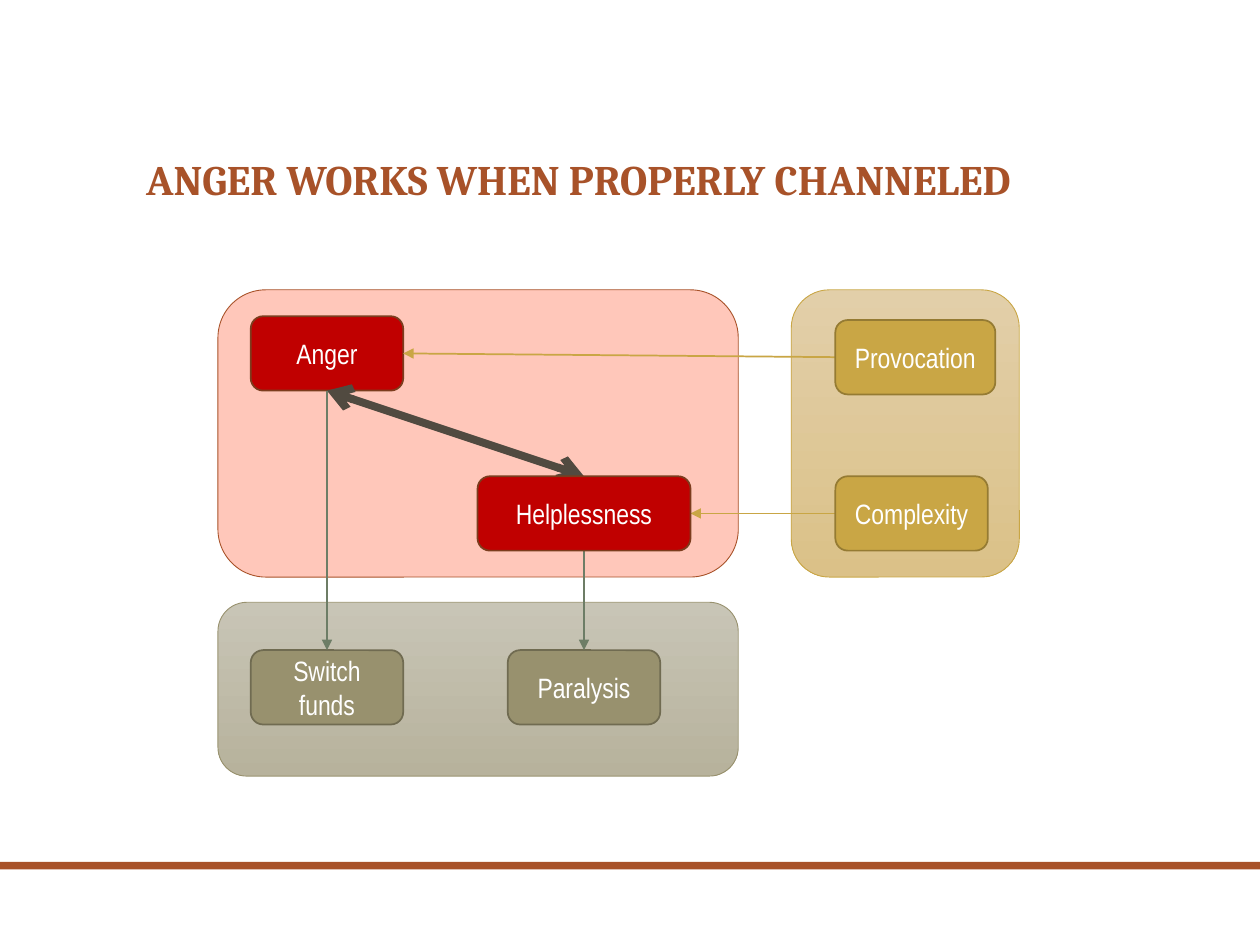
from lxml.etree import SubElement
from pptx import Presentation
from pptx.dml.color import RGBColor
from pptx.enum.shapes import MSO_CONNECTOR as Connector, MSO_SHAPE as Shape
from pptx.enum.text import MSO_ANCHOR as Anchor, MSO_AUTO_SIZE as AutoSize, PP_ALIGN as Align
from pptx.oxml.ns import qn
from pptx.util import Inches, Pt

RUST, GOLD, OLIVE, SAGE = "A85229", "C9A645", "98916E", "6D7D66"
RED, WHITE, CHARCOAL = "C00000", "FFFFFF", "514A40"
TOP, LEFT, BOTTOM, RIGHT = range(4)
NODE_WIDTH, NODE_HEIGHT = 1.21, 0.59


def color(value):
    return RGBColor.from_string(value)


def apply_format(target, values):
    for name, value in values.items():
        setattr(target, name, value)


def set_font(para, face, size, tint, bold=False):
    apply_format(para.font, {"name": face, "size": Pt(size), "bold": bold})
    para.font.color.rgb = color(tint)


def add_block(page, kind, area, outline=None, weight=1):
    block = page.shapes.add_shape(kind, *map(Inches, area))
    block.shadow.inherit = False
    if outline:
        block.line.color.rgb = color(outline)
        block.line.width = Pt(weight)
    else:
        block.line.fill.background()
    return block


def fill_solid(block, tint, opacity=None):
    block.fill.solid()
    block.fill.fore_color.rgb = color(tint)
    if opacity:
        tint_element = block.element.spPr.find(qn("a:solidFill"))[0]
        SubElement(tint_element, qn("a:alpha"), val=str(opacity * 1000))


def fill_gradient(block, tints):
    block.fill.gradient()
    block.fill.gradient_angle = 270
    for stop, tint in zip(block.fill.gradient_stops, tints):
        stop.color.rgb = color(tint)


def add_title(page, area, text):
    title = page.shapes.title
    apply_format(title, dict(zip(("left", "top", "width", "height"), map(Inches, area))))
    frame = title.text_frame
    frame.text = text
    apply_format(frame, {"word_wrap": True, "auto_size": AutoSize.NONE,
                         "vertical_anchor": Anchor.BOTTOM})
    para = frame.paragraphs[0]
    apply_format(para, {"alignment": Align.LEFT, "line_spacing": 0.9})
    set_font(para, "Cambria", 24, RUST, bold=True)


def add_node(page, area, text, tint, outline):
    node = add_block(page, Shape.ROUNDED_RECTANGLE, area, outline)
    fill_solid(node, tint)
    frame = node.text_frame
    frame.text = text
    apply_format(frame, {"word_wrap": True, "vertical_anchor": Anchor.MIDDLE})
    frame.paragraphs[0].alignment = Align.CENTER
    set_font(frame.paragraphs[0], "Arial Narrow", 16, WHITE)
    return node


def add_arrow(page, start, start_site, end, end_site, tint, weight=1, ends=None):
    arrow = page.shapes.add_connector(Connector.STRAIGHT, 0, 0, 0, 0)
    arrow.begin_connect(start, start_site)
    arrow.end_connect(end, end_site)
    arrow.line.color.rgb = color(tint)
    arrow.line.width = Pt(weight)
    line = arrow.line._get_or_add_ln()
    for tag, kind in (ends or {"tailEnd": "triangle"}).items():
        SubElement(line, qn(f"a:{tag}"), type=kind)
    SubElement(arrow.element.spPr, qn("a:effectLst"))


def add_panels(page, left, top):
    upper_height, emotion_width = 2.28, 4.13
    rounded = Shape.ROUNDED_RECTANGLE
    causes = add_block(page, rounded, (left + 4.55, top, 1.81, upper_height), GOLD, 0.5)
    fill_gradient(causes, ("E2CFA9", "DBC188"))
    outcomes = add_block(page, rounded, (left, top + 2.48, emotion_width, 1.38), OLIVE, 0.5)
    fill_gradient(outcomes, ("C8C5B6", "B7B29C"))
    emotions = add_block(page, rounded, (left, top, emotion_width, upper_height), RUST, 0.5)
    fill_solid(emotions, "FF3300", opacity=27)


def add_diagram(page, left, top):
    add_panels(page, left, top)
    styles = {"emotion": (RED, "7C3D1E"), "outcome": (OLIVE, "706B51"),
              "cause": (GOLD, "957B33")}
    layout = [
        ("Anger", "emotion", 0.26, 0.21, NODE_WIDTH),
        ("Switch funds", "outcome", 0.26, 2.86, NODE_WIDTH),
        ("Paralysis", "outcome", 2.3, 2.86, NODE_WIDTH),
        ("Helplessness", "emotion", 2.06, 1.48, 1.69),
        ("Provocation", "cause", 4.9, 0.24, 1.27),
        ("Complexity", "cause", 4.9, 1.48, NODE_WIDTH),
    ]
    nodes = {
        text: add_node(page, (left + across, top + down, width, NODE_HEIGHT),
                       text, *styles[style])
        for text, style, across, down, width in layout
    }
    anger, helpless = nodes["Anger"], nodes["Helplessness"]
    add_arrow(page, helpless, TOP, anger, BOTTOM, CHARCOAL, 4.5,
              {"headEnd": "arrow", "tailEnd": "arrow"})
    add_arrow(page, nodes["Complexity"], LEFT, helpless, RIGHT, GOLD)
    add_arrow(page, helpless, BOTTOM, nodes["Paralysis"], TOP, SAGE)
    add_arrow(page, anger, BOTTOM, nodes["Switch funds"], TOP, SAGE)
    add_arrow(page, nodes["Provocation"], LEFT, anger, RIGHT, GOLD)
    for name in ("Helplessness", "Provocation", "Complexity"):
        element = nodes[name].element
        element.getparent().append(element)


def main():
    deck = Presentation()
    deck.slide_width, deck.slide_height = Inches(10), Inches(7.5)
    page = deck.slides.add_slide(deck.slide_layouts[5])
    fill_solid(add_block(page, Shape.RECTANGLE, (0, 6.84, 10, 0.06)), RUST)
    add_title(page, (1.06, 0.42, 7.88, 1.25), "ANGER WORKS WHEN PROPERLY CHANNELED")
    add_diagram(page, 1.73, 2.3)
    deck.save("out.pptx")


if __name__ == "__main__":
    main()
